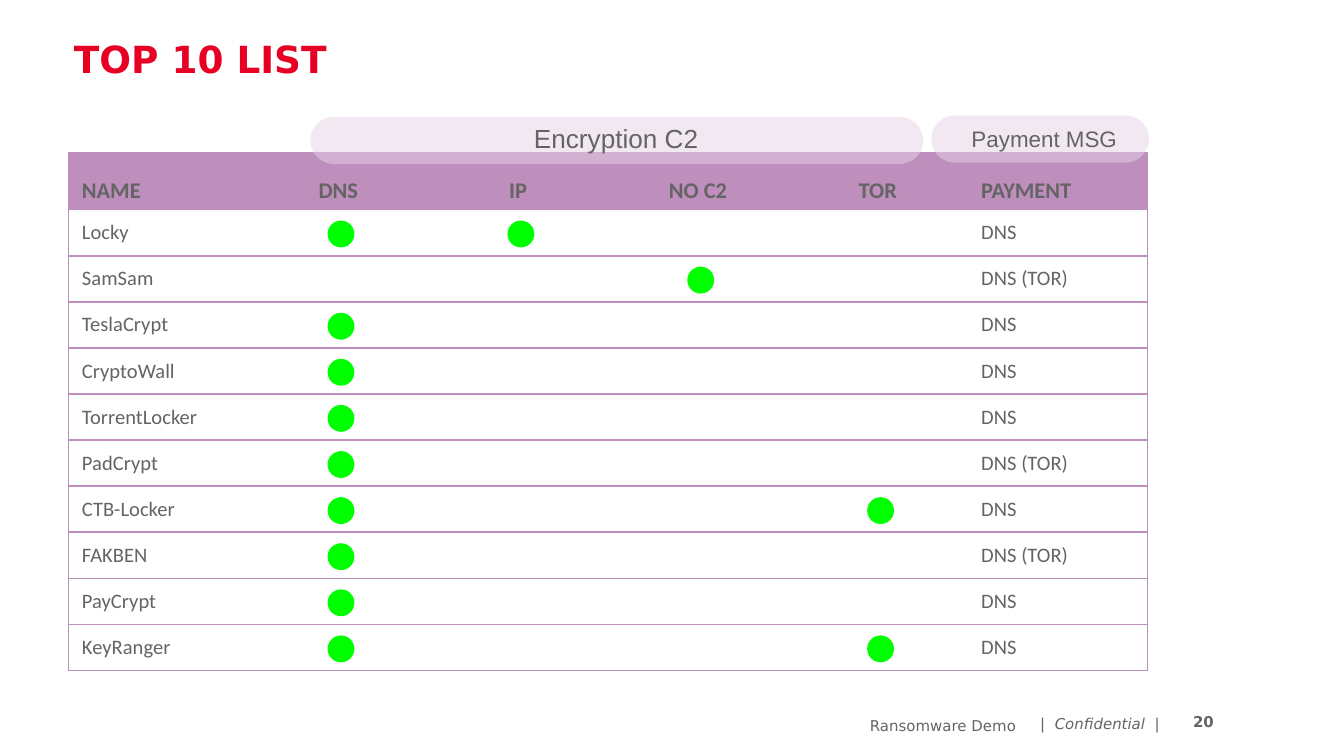
"""Build the ransomware top 10 slide with its communication channel table."""
from lxml.etree import SubElement
from pptx import Presentation
from pptx.dml.color import RGBColor
from pptx.enum.shapes import MSO_SHAPE
from pptx.enum.text import MSO_ANCHOR, PP_ALIGN
from pptx.oxml.ns import qn
from pptx.util import Inches, Pt

COLORS = {"red": "E70023", "gray": "646464", "purple": "BE8EBD",
          "lilac": "E5D2E5", "green": "00FF00", "white": "FFFFFF"}
SLIDE_WIDTH = 10
SLIDE_HEIGHT = SLIDE_WIDTH * 9 / 16
LEFT, TOP, WIDTH, HEIGHT = 0.51, 1.14, 8.03, 3.85
HEADINGS = ["NAME", "DNS", "IP", "NO C2", "TOR", "PAYMENT"]
FAMILIES = [
    ("Locky", ["DNS", "IP"], "DNS"),
    ("SamSam", ["NO C2"], "DNS (TOR)"),
    ("TeslaCrypt", ["DNS"], "DNS"),
    ("CryptoWall", ["DNS"], "DNS"),
    ("TorrentLocker", ["DNS"], "DNS"),
    ("PadCrypt", ["DNS"], "DNS (TOR)"),
    ("CTB-Locker", ["DNS", "TOR"], "DNS"),
    ("FAKBEN", ["DNS"], "DNS (TOR)"),
    ("PayCrypt", ["DNS"], "DNS"),
    ("KeyRanger", ["DNS", "TOR"], "DNS"),
]
HEADER = 0.42
COLUMN = WIDTH / len(HEADINGS)
ROW = (HEIGHT - HEADER) / len(FAMILIES)
DOT = 0.2


def write(frame, words, font, size, color="gray", bold=False, italic=False, align=PP_ALIGN.LEFT):
    paragraph = frame.paragraphs[0]
    paragraph.alignment = align
    run = paragraph.add_run()
    run.text = words
    run.font.name, run.font.size = font, Pt(size)
    run.font.bold, run.font.italic = bold, italic
    run.font.color.rgb = RGBColor.from_string(COLORS[color])


def add_box(box, insets=(0.1, 0.05, 0.1, 0.05), anchor=MSO_ANCHOR.TOP):
    frame = slide.shapes.add_textbox(*map(Inches, box)).text_frame
    frame.word_wrap = True
    frame.vertical_anchor = anchor
    (frame.margin_left, frame.margin_top,
     frame.margin_right, frame.margin_bottom) = map(Inches, insets)
    return frame


deck = Presentation()
deck.slide_width, deck.slide_height = Inches(SLIDE_WIDTH), Inches(SLIDE_HEIGHT)
slide = deck.slides.add_slide(deck.slide_layouts[6])

confidential = add_box((7.68, 5.28, 0.95, 0.21), (0, 0, 0, 0), MSO_ANCHOR.MIDDLE)
write(confidential, "|  ", "DejaVu Sans", 8, align=PP_ALIGN.RIGHT)
write(confidential, "Confidential  |", "DejaVu Sans", 8, italic=True, align=PP_ALIGN.RIGHT)
page_number = add_box((8.83, 5.26, 0.25, 0.21), (0, 0, 0, 0), MSO_ANCHOR.MIDDLE)
write(page_number, "20", "DejaVu Sans", 8, bold=True, align=PP_ALIGN.CENTER)
title = add_box((0.55, 0.22, 5.24, 0.86), (0, 0.05, 0.1, 0.05))
write(title, "TOP 10 LIST", "DejaVu Sans", 20, "red", bold=True)
footer = add_box((5.1, 5.28, 2.56, 0.21))
write(footer, "Ransomware Demo", "DejaVu Sans", 8, align=PP_ALIGN.RIGHT)

lines = [HEADINGS] + [[name, "", "", "", "", payment] for name, _, payment in FAMILIES]
last = len(HEADINGS) - 1
families = slide.shapes.add_table(
    len(lines), len(HEADINGS), *map(Inches, (LEFT, TOP, WIDTH, HEIGHT))).table
for column in families.columns:
    column.width = Inches(COLUMN)
for r, line in enumerate(lines):
    heading = r == 0
    families.rows[r].height = Inches(HEADER if heading else ROW)
    for c, words in enumerate(line):
        cell = families.cell(r, c)
        cell.margin_left = cell.margin_right = Inches(0.1)
        cell.margin_top = cell.margin_bottom = Inches(0.04)
        cell.vertical_anchor = MSO_ANCHOR.BOTTOM if heading else MSO_ANCHOR.MIDDLE
        if words:
            write(cell.text_frame, words, "Calibri", 12 if heading else 11, bold=heading,
                  align=PP_ALIGN.CENTER if 0 < c < last else PP_ALIGN.LEFT)
        else:
            SubElement(cell.text_frame.paragraphs[0]._p, qn("a:endParaRPr"), sz="1100")
        for side, drawn in (("L", c == 0), ("R", c == last), ("T", True), ("B", True)):
            border = SubElement(cell._tc.get_or_add_tcPr(), qn(f"a:ln{side}"), w=str(Pt(1)))
            if drawn:
                ink = SubElement(border, qn("a:solidFill"))
                SubElement(ink, qn("a:srgbClr"), val=COLORS["purple"])
            else:
                SubElement(border, qn("a:noFill"))
        cell.fill.solid()
        cell.fill.fore_color.rgb = RGBColor.from_string(COLORS["purple" if heading else "white"])

marks = [(MSO_SHAPE.ROUNDED_RECTANGLE, (2.31, 0.87, 4.56, 0.35), "lilac"),
         (MSO_SHAPE.ROUNDED_RECTANGLE, (6.93, 0.86, 1.62, 0.35), "lilac")]
for r, (_, channels, _) in enumerate(FAMILIES):
    for channel in channels:
        x = LEFT + (HEADINGS.index(channel) + 0.5) * COLUMN - DOT / 2 + 0.02
        y = TOP + HEADER + (r + 0.5) * ROW - DOT / 2 + 0.01
        marks.append((MSO_SHAPE.OVAL, (x, y, DOT, DOT), "green"))
for outline, box, color in marks:
    mark = slide.shapes.add_shape(outline, *map(Inches, box))
    mark.shadow.inherit = False
    mark.line.fill.background()
    mark.fill.solid()
    mark.fill.fore_color.rgb = RGBColor.from_string(COLORS[color])
    if color == "lilac":
        mark.adjustments[0] = 0.5
        tint = mark.fill._xPr.find(qn("a:solidFill")).find(qn("a:srgbClr"))
        SubElement(tint, qn("a:alpha"), val="50000")

encryption = add_box((3.27, 0.86, 2.63, 0.34))
write(encryption, "Encryption C2", "Arial", 14, align=PP_ALIGN.CENTER)
payment_message = add_box((7.13, 0.88, 1.35, 0.3))
write(payment_message, "Payment MSG", "Arial", 12)

deck.save("out.pptx")
